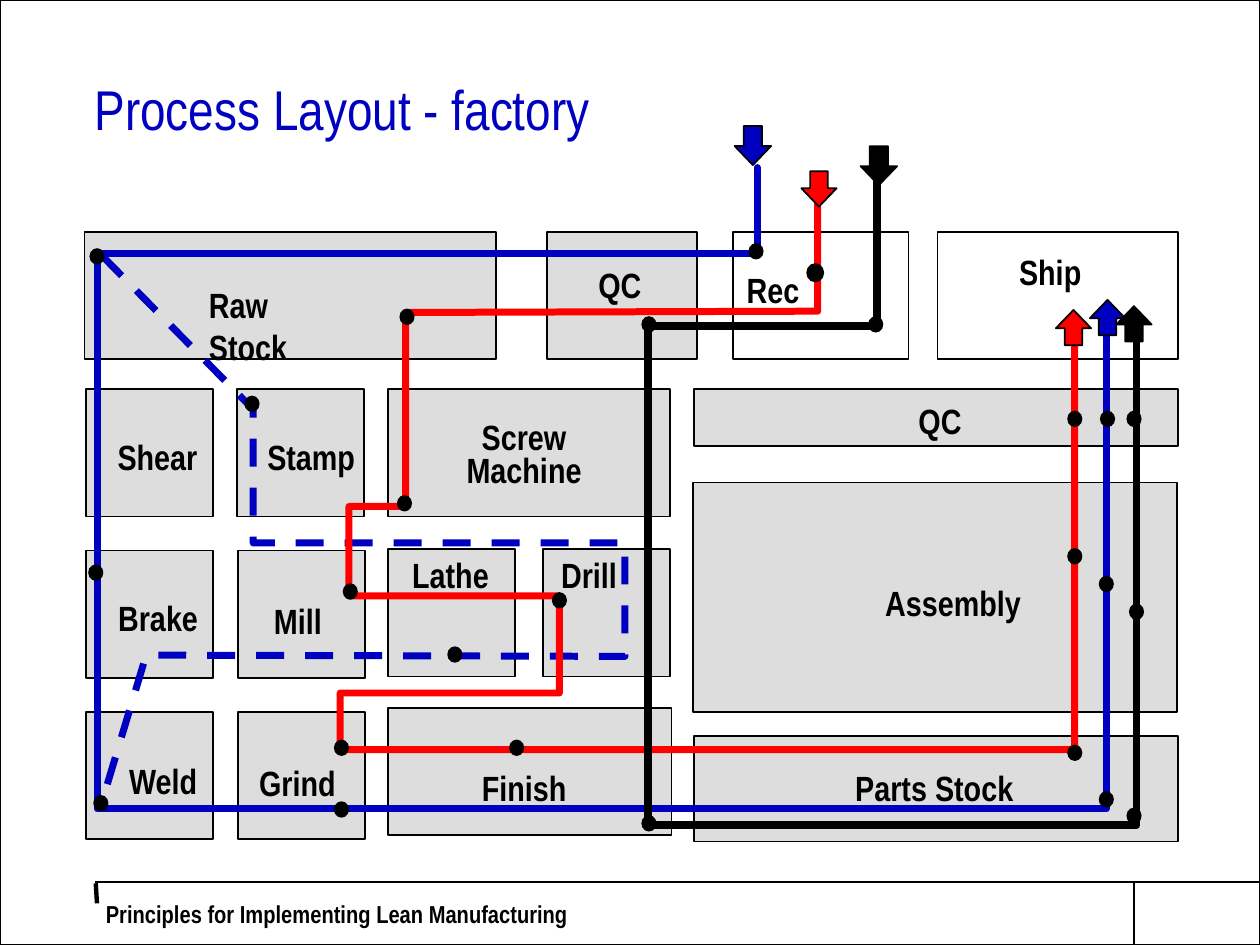
from lxml import etree
from pptx import Presentation, util as u
from pptx.dml.color import RGBColor
from pptx.enum import dml, shapes, text
from pptx.oxml.ns import qn

PX = 9144  # 100 px to the inch
BLACK = RGBColor(0x00, 0x00, 0x00)
WHITE = RGBColor(0xFF, 0xFF, 0xFF)
GREY = RGBColor(0xDD, 0xDD, 0xDD)
BLUE = RGBColor(0x00, 0x00, 0xC0)
RED = RGBColor(0xFF, 0x00, 0x00)
FACE = "Arial Narrow"
CELL = 101  # side of a standard work area

# Work areas: left, top, width, height, fill
AREAS = [
    (67, 184, 327, CELL, GREY), (434, 184, 119, CELL, GREY),
    (582, 184, 139, CELL, WHITE), (744, 184, 191, CELL, WHITE),
    (68, 309, CELL, CELL, GREY), (188, 309, CELL, CELL, GREY),
    (308, 309, 224, CELL, GREY), (551, 309, 384, 45, GREY),
    (68, 437, CELL, CELL, GREY), (189, 437, CELL, CELL, GREY),
    (308, 436, CELL, CELL, GREY), (431, 436, CELL, CELL, GREY),
    (550, 383, 384, 182, GREY),
    (68, 565, CELL, CELL, GREY), (189, 565, CELL, CELL, GREY),
    (308, 562, 225, CELL, GREY), (551, 584, 384, 84, GREY),
]

# Centred area names: name, left, top, width, height
LABELS = [
    ("QC", 431, 211, 122, 37), ("Rec", 562, 215, 103, 37),
    ("Ship", 773, 200, 121, 37), ("Shear", 74, 347, 102, 37),
    ("Stamp", 188, 347, 118, 37), ("Screw Machine", 348, 331, 136, 64),
    ("QC", 685, 319, 122, 37), ("Brake", 75, 475, 101, 37),
    ("Mill", 186, 477, 101, 37), ("Lathe", 307, 441, 101, 37),
    ("Drill", 417, 441, 101, 37), ("Assembly", 678, 463, 157, 37),
    ("Weld", 79, 604, 101, 37), ("Grind", 177, 606, 118, 37),
    ("Finish", 348, 610, 136, 37), ("Parts Stock", 649, 610, 185, 37),
]

# Material routes
BLUE_BRANCH = [(81, 203), (201, 325), (201, 431), (496, 431), (496, 521),
               (116, 520), (82, 633)]
BLUE_ROUTE = [(601, 133), (601, 201), (77, 201), (77, 642), (878, 642),
              (878, 254)]
RED_ROUTE = [(649, 160), (649, 247), (322, 248), (322, 402), (277, 402),
             (277, 473), (444, 473), (444, 550), (270, 550), (270, 595),
             (853, 595), (853, 273)]
BLACK_ROUTE = [(696, 142), (696, 259), (514, 259), (514, 655), (902, 655),
               (902, 259)]

# Top left corners of the stops
STOPS = [
    (594, 193), (71, 197), (194, 314), (70, 448), (74, 631), (265, 636),
    (355, 513), (872, 628), (872, 457), (873, 326),
    (317, 245), (315, 393), (272, 463), (438, 470), (265, 587), (404, 587),
    (847, 591), (847, 435), (847, 326),
    (689, 251), (509, 251), (509, 647), (894, 641), (896, 479), (894, 326),
]

DOWN, UP = shapes.MSO_SHAPE.DOWN_ARROW, shapes.MSO_SHAPE.UP_ARROW
ARROWS = [
    (DOWN, 683, 116, 29, 31, BLACK), (DOWN, 583, 100, 29, 31, BLUE),
    (DOWN, 636, 136, 28, 28, RED), (UP, 865, 238, 28, 28, BLUE),
    (UP, 838, 246, 28, 28, RED), (UP, 886, 243, 28, 28, BLACK),
]


def emu(*lengths):
    return [length * PX for length in lengths]


def set_values(target, values):
    for name, value in values.items():
        setattr(target, name, value)


def set_text(box, words, size, color, frame_values, para_values, bold=True):
    frame = box.text_frame
    set_values(frame, {"word_wrap": True, "auto_size": text.MSO_AUTO_SIZE.NONE,
                       **frame_values})
    frame.text = words
    para = frame.paragraphs[0]
    set_values(para, {"space_before": u.Pt(0), **para_values})
    for span in para.runs:
        set_values(span.font, {"name": FACE, "size": u.Pt(size), "bold": bold})
        span.font.color.rgb = color


def add_solid(page, kind, left, top, width, height, fill=None, line=1):
    shape = page.shapes.add_shape(kind, *emu(left, top, width, height))
    shape.shadow.inherit = False
    if fill is None:
        shape.fill.background()
    else:
        shape.fill.solid()
        shape.fill.fore_color.rgb = fill
    if line:
        shape.line.color.rgb = BLACK
        shape.line.width = u.Pt(line)
    else:
        shape.line.fill.background()
    return shape


def add_rule(page, start, end, width):
    rule = page.shapes.add_connector(shapes.MSO_CONNECTOR.STRAIGHT,
                                     *emu(*start, *end))
    rule.line.color.rgb = BLACK
    rule.line.width = u.Pt(width)
    etree.SubElement(rule._element.spPr, qn("a:effectLst"))


def add_route(page, points, color, width=4, dashed=False):
    builder = page.shapes.build_freeform(*points[0], scale=PX)
    builder.add_line_segments(points[1:], close=False)
    route = builder.convert_to_shape()
    route.shadow.inherit = False
    route.fill.background()
    route.line.color.rgb = color
    route.line.width = u.Pt(width)
    outline = route._element.spPr.find(qn("a:ln"))
    if dashed:
        route.line.dash_style = dml.MSO_LINE.DASH
    else:
        outline.set("cap", "rnd")
    etree.SubElement(outline, qn("a:round"))


def add_label(page, words, left, top, width, height, **para_values):
    box = page.shapes.add_textbox(*emu(left, top, width, height))
    set_text(box, words, 20, BLACK, {}, para_values)


def add_footer(page):
    add_rule(page, (1000, 700), (75, 700), 0.75)
    add_rule(page, (900, 700), (900, 750), 0.75)
    add_rule(page, (76, 701), (77, 717), 2.5)
    add_solid(page, shapes.MSO_SHAPE.RECTANGLE, 0, 0, 1000, 750, line=0.75)
    box = page.shapes.add_textbox(*emu(75, 700, 482, 50))
    set_text(box, "Principles for Implementing Lean Manufacturing", 14, BLACK,
             {"margin_left": 9 * PX, "margin_right": 0, "margin_top": 0,
              "margin_bottom": 0, "vertical_anchor": text.MSO_ANCHOR.MIDDLE},
             {})


def add_title(page):
    title = page.shapes.title
    set_values(title, dict(zip(("left", "top", "width", "height"),
                               emu(75, 65, 725, 125))))
    set_text(title, "Process Layout - factory", 32, BLUE,
             {"margin_left": 0, "margin_right": 0, "margin_top": 0,
              "margin_bottom": 0, "vertical_anchor": text.MSO_ANCHOR.TOP},
             {"alignment": text.PP_ALIGN.LEFT, "line_spacing": 0.9},
             bold=False)


def main():
    deck = Presentation()
    deck.slide_width, deck.slide_height = emu(1000, 750)
    page = deck.slides.add_slide(deck.slide_layouts[5])

    add_footer(page)
    add_title(page)

    # Factory floor
    for area in AREAS:
        add_solid(page, shapes.MSO_SHAPE.RECTANGLE, *area)
    add_label(page, "Raw\vStock", 156, 220, 135, 43)
    for label in LABELS:
        add_label(page, *label, alignment=text.PP_ALIGN.CENTER,
                  line_spacing=0.8)

    # Material flow with its stops, entries and exits
    add_route(page, BLUE_BRANCH, BLUE, dashed=True)
    add_route(page, BLUE_ROUTE, BLUE)
    add_route(page, RED_ROUTE, RED)
    for stop in STOPS:
        add_solid(page, shapes.MSO_SHAPE.OVAL, *stop, 12, 13, BLACK, line=0)
    add_solid(page, shapes.MSO_SHAPE.OVAL, 641, 210, 12, 13, BLACK, line=1.5)
    for arrow in ARROWS:
        add_solid(page, *arrow).adjustments[1] = 0.52
    add_route(page, BLACK_ROUTE, BLACK, width=4.5)

    deck.save("out.pptx")


if __name__ == "__main__":
    main()
